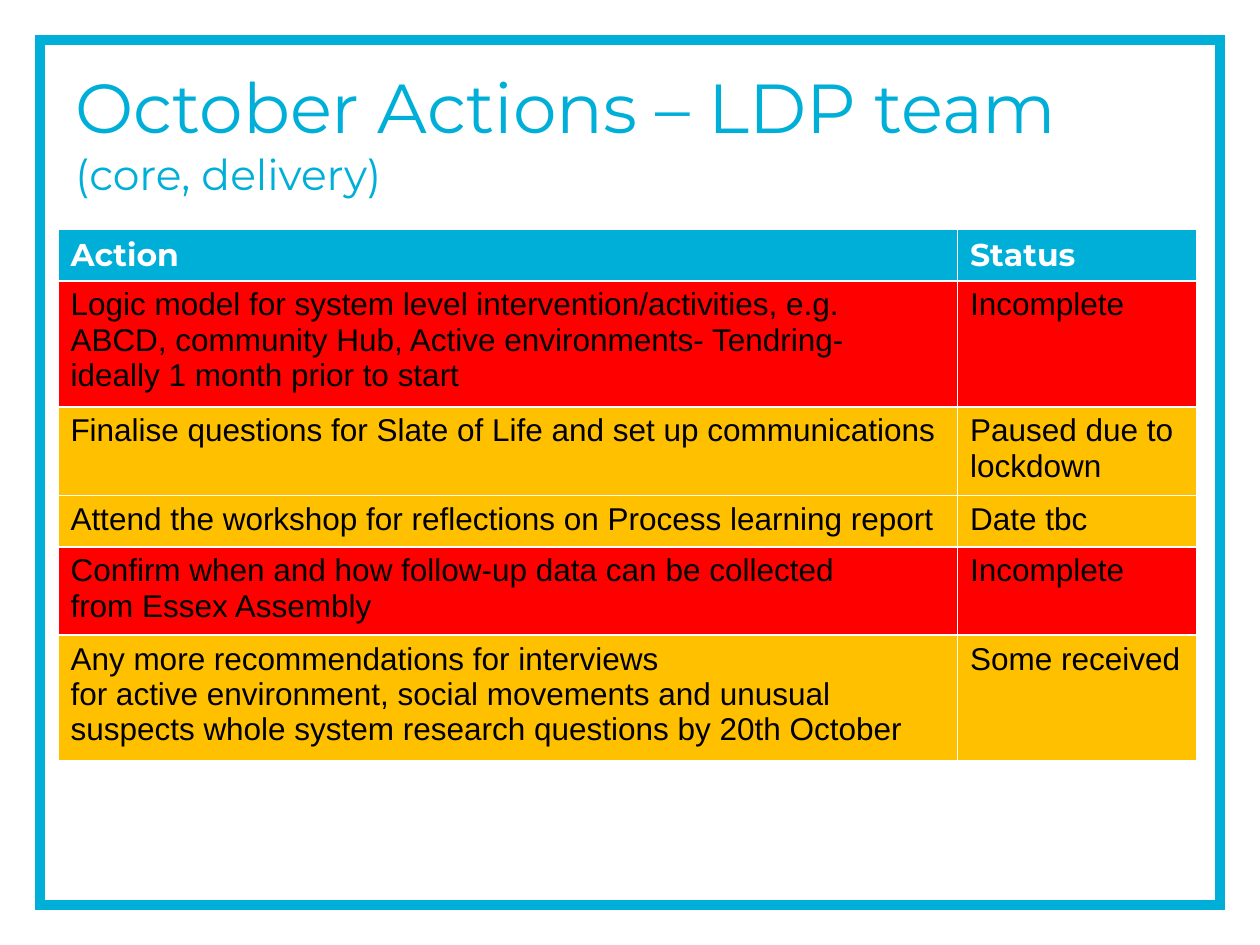
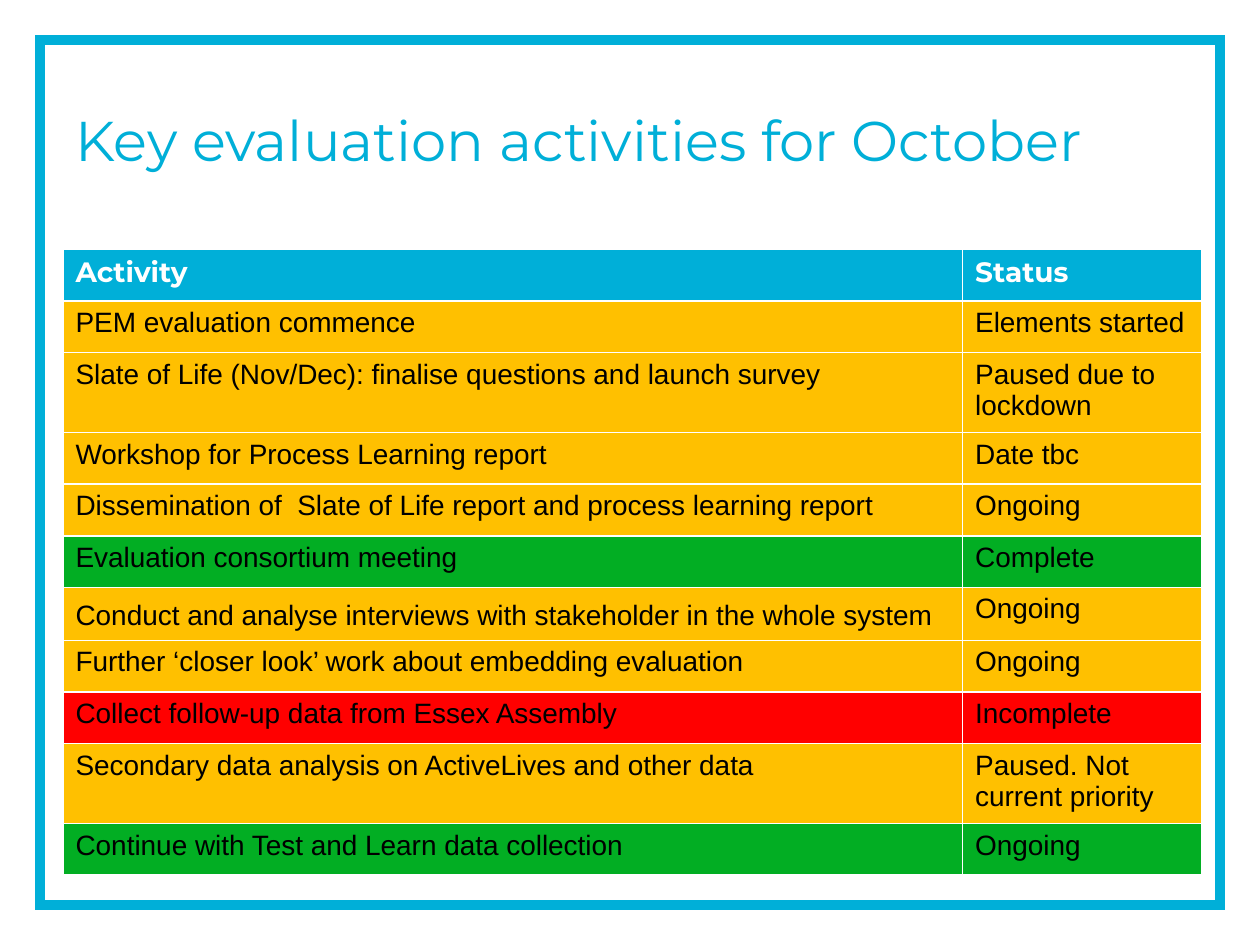
from lxml import etree
from pptx import Presentation
from pptx.dml.color import RGBColor
from pptx.enum.shapes import MSO_SHAPE as Shape
from pptx.enum.text import MSO_ANCHOR as Anchor
from pptx.oxml.ns import qn
from pptx.util import Inches, Pt

BLUE, WHITE, BLACK = "00AFD8", "FFFFFF", "000000"
RED, AMBER, GREEN = "FF0000", "FFC000", "02AE23"
HEADING_FONT, BODY_FONT = "Montserrat", "Arial"
COLUMN_WIDTHS = (7.14, 1.9)
ROW_HEIGHT = 0.41
HARD_SPACE = chr(160)

# A tilde stands for a space at which the line must not break.
ACTIONS = [
    ("Logic model for system level~intervention/activities, e.g. ABCD,~community~Hub, "
     "Active environments- Tendring- ideally~1~month prior to start", "Incomplete", RED),
    ("Finalise questions for Slate of Life and set up~communications",
     "Paused due to lockdown", AMBER),
    ("Attend the workshop for reflections on~Process learning report", "Date tbc", AMBER),
    ("Confirm when and how follow-up data can be collected from~Essex Assembly",
     "Incomplete", RED),
    ("Any more recommendations for interviews for~active~environment, social movements "
     "and~unusual suspects whole~system research~questions by 20th~October",
     "Some received", AMBER),
]
INTERVIEWS = "Conduct and analyse interviews with stakeholder in the whole system"
ACTIVITIES = [
    ("PEM evaluation commence", "Elements started", AMBER),
    ("Slate of Life (Nov/Dec): finalise questions and launch survey",
     "Paused due to lockdown", AMBER),
    ("Workshop for Process Learning report", "Date tbc", AMBER),
    ("Dissemination of  Slate of Life report and process learning report", "Ongoing", AMBER),
    ("Evaluation consortium meeting", "Complete", GREEN),
    (INTERVIEWS, "Ongoing", AMBER),
    ("Further ‘closer look’ work about embedding evaluation", "Ongoing", AMBER),
    ("Collect follow-up data from Essex Assembly", "Incomplete", RED),
    ("Secondary data analysis on ActiveLives and other data",
     "Paused. Not current priority", AMBER),
    ("Continue with Test and Learn data collection", "Ongoing", GREEN),
]


def rgb(color):
    return RGBColor.from_string(color)


def add_run(paragraph, text, size, font, color, bold=False):
    run = paragraph.add_run()
    run.text = text.replace("~", HARD_SPACE)
    run.font.size = Pt(size)
    run.font.name = font
    run.font.bold = bold
    run.font.color.rgb = rgb(color)


def add_frame(slide, left, top, width, height):
    """Draw the border of the slide with square corners."""
    frame = slide.shapes.add_shape(
        Shape.RECTANGLE, Inches(left), Inches(top), Inches(width), Inches(height))
    frame.shadow.inherit = False
    frame.fill.background()
    frame.line.color.rgb = rgb(BLUE)
    frame.line.width = Pt(5.67)
    outline = frame._element.spPr.find(qn("a:ln"))
    etree.SubElement(outline, qn("a:miter"), lim="800000")


def add_title(slide, left, top, width, height, parts):
    """Write the title from (text, size) parts in one paragraph."""
    title = slide.shapes.add_textbox(
        Inches(left), Inches(top), Inches(width), Inches(height)).text_frame
    title.word_wrap = True
    title.vertical_anchor = Anchor.MIDDLE
    for text, size in parts:
        add_run(title.paragraphs[0], text, size, HEADING_FONT, BLUE)


def add_status_table(slide, left, top, heading, entries, size):
    """Draw a table whose rows are filled with the colour of their status.

    The white rules between the cells come from the default table style.
    """
    rows = [(heading, "Status", BLUE), *entries]
    table = slide.shapes.add_table(
        len(rows), len(COLUMN_WIDTHS), Inches(left), Inches(top),
        Inches(sum(COLUMN_WIDTHS)), Inches(ROW_HEIGHT * len(rows))).table
    for column, width in zip(table.columns, COLUMN_WIDTHS):
        column.width = Inches(width)
    for index, (*texts, fill) in enumerate(rows):
        table.rows[index].height = Inches(ROW_HEIGHT)
        is_header = index == 0
        font, color = (HEADING_FONT, WHITE) if is_header else (BODY_FONT, BLACK)
        for cell, text in zip(table.rows[index].cells, texts):
            cell.fill.solid()
            cell.fill.fore_color.rgb = rgb(fill)
            paragraph = cell.text_frame.paragraphs[0]
            if text == INTERVIEWS:
                paragraph.line_spacing = 1.2
                paragraph.space_after = Pt(6)
            add_run(paragraph, text, size, font, color, is_header)


def add_status_slide(deck, title_top, title_parts, table_at, heading, entries, size):
    slide = deck.slides.add_slide(deck.slide_layouts[6])
    add_frame(slide, 0.32, 0.32, 9.36, 6.86)
    add_title(slide, 0.5, title_top, 9, 1.25, title_parts)
    add_status_table(slide, *table_at, heading, entries, size)


def main():
    deck = Presentation()
    deck.slide_width, deck.slide_height = Inches(10), Inches(7.5)
    add_status_slide(
        deck, 0.42, [("October Actions – LDP team ", 39.6), ("(core, delivery)", 24.3)],
        (0.46, 1.82), "Action", ACTIONS, 18)
    add_status_slide(
        deck, 0.48, [("Key evaluation activities for October", 32)],
        (0.5, 1.98), "Activity", ACTIVITIES, 16)
    deck.save("out.pptx")


if __name__ == "__main__":
    main()
